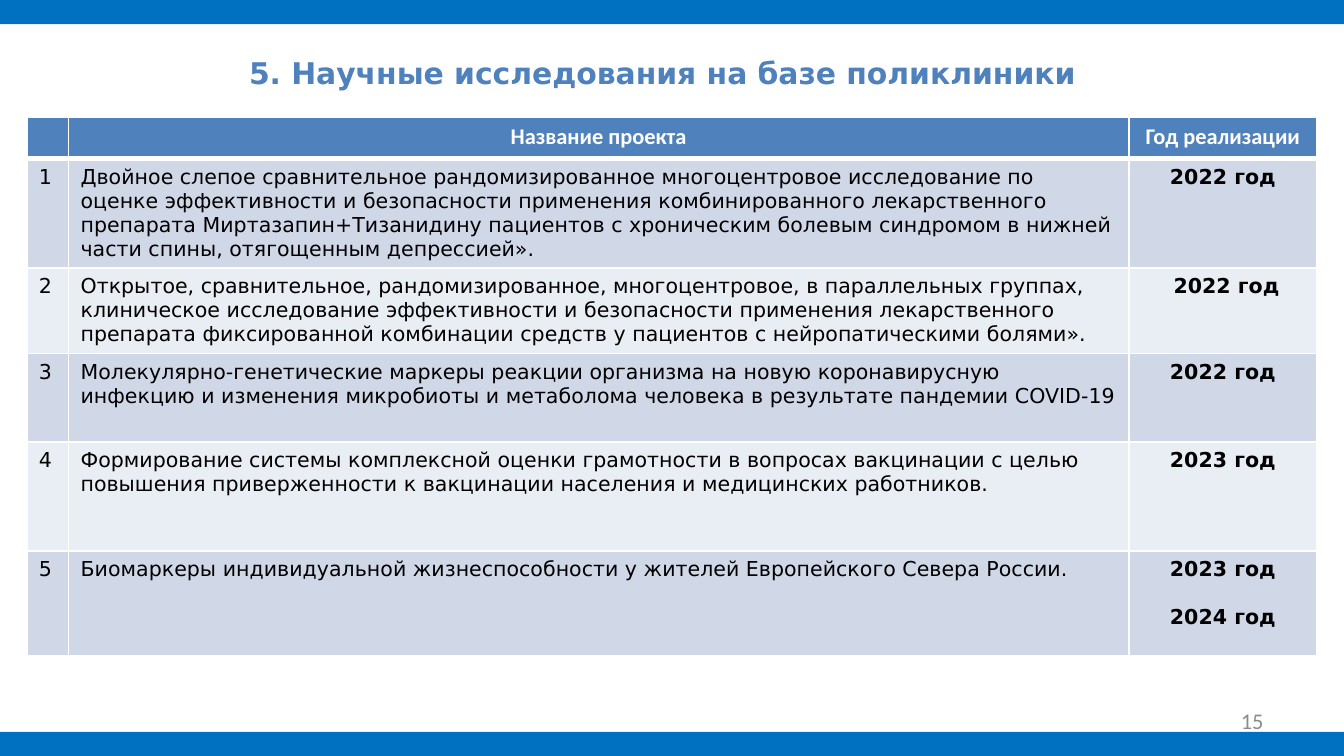
from dataclasses import dataclass

from lxml.etree import SubElement
from pptx import Presentation
from pptx.dml.color import RGBColor
from pptx.enum.shapes import MSO_SHAPE
from pptx.enum.text import MSO_ANCHOR, PP_ALIGN
from pptx.oxml.ns import qn
from pptx.util import Inches, Pt

# Content
TITLE = "5. Научные исследования на базе поликлиники"
PAGE_NUMBER = "15"
HEADER = ("", "Название проекта", "Год реализации")
PROJECTS = [
    ("Двойное слепое сравнительное рандомизированное многоцентровое исследование по "
     "оценке эффективности и безопасности применения комбинированного лекарственного "
     "препарата Миртазапин+Тизанидину пациентов с хроническим болевым синдромом в нижней "
     "части спины, отягощенным депрессией».", ["2022 год"]),
    ("Открытое, сравнительное, рандомизированное, многоцентровое, в параллельных группах, "
     "клиническое исследование эффективности и безопасности применения лекарственного "
     "препарата фиксированной комбинации средств у пациентов с нейропатическими болями».",
     [" 2022 год"]),
    ("Молекулярно-генетические маркеры реакции организма на новую коронавирусную "
     "инфекцию и изменения микробиоты и метаболома человека в результате пандемии COVID-19",
     ["2022 год"]),
    ("Формирование системы комплексной оценки грамотности в вопросах вакцинации с целью "
     "повышения приверженности к вакцинации населения и медицинских работников.",
     ["2023 год"]),
    ("Биомаркеры индивидуальной жизнеспособности у жителей Европейского Севера России.",
     ["2023 год", "2024 год"]),
]

# Grid, in inches
COLUMNS = (0.31, 7.89, 1.4)
ROWS = (0.31, 0.81, 0.63, 0.66, 0.81, 0.78)
TABLE_LEFT, TABLE_TOP = 0.2, 0.87
BAR_HEIGHT = 0.18


@dataclass(frozen=True)
class Theme:
    bar: str = "0070C0"
    accent: str = "4F81BD"
    bands: tuple = ("D0D8E8", "E9EDF4")
    white: str = "FFFFFF"
    black: str = "000000"
    grey: str = "8C8C8C"
    body_font: str = "DejaVu Sans"
    label_font: str = "Calibri"
    title_size: int = 16
    label_size: int = 12
    body_size: int = 11


THEME = Theme()


def write(frame, *lines, size=THEME.body_size, font=THEME.body_font, color=THEME.black,
          bold=False, align=PP_ALIGN.LEFT, gap=0):
    """Fill a text frame, one paragraph a line, with a gap between paragraphs."""
    frame.word_wrap = True
    for index, line in enumerate(lines):
        para = frame.add_paragraph() if index else frame.paragraphs[0]
        para.alignment = align
        if index:
            para.space_before = Pt(gap)
        if not line:
            SubElement(para._p, qn("a:endParaRPr"), sz=str(size * 100))
            continue
        span = para.add_run()
        span.text = line
        span.font.size, span.font.name, span.font.bold = Pt(size), font, bold
        span.font.color.rgb = RGBColor.from_string(color)


def border(cell, bottom):
    """Draw white cell borders, one point wide except below."""
    properties = cell._tc.get_or_add_tcPr()
    widths = {"lnL": 1, "lnR": 1, "lnT": 1, "lnB": bottom}
    for index, (side, width) in enumerate(widths.items()):
        line = SubElement(properties, qn(f"a:{side}"), w=str(Pt(width)))
        fill = SubElement(line, qn("a:solidFill"))
        SubElement(fill, qn("a:srgbClr"), val=THEME.white)
        properties.insert(index, line)


deck = Presentation()
deck.slide_width = Inches(10)
deck.slide_height = deck.slide_width * 9 // 16
page = deck.slides.add_slide(deck.slide_layouts[5])

# Bars along the top and bottom edges
for top in (0, deck.slide_height - Inches(BAR_HEIGHT)):
    bar = page.shapes.add_shape(MSO_SHAPE.RECTANGLE, 0, top, deck.slide_width, Inches(BAR_HEIGHT))
    bar.shadow.inherit = False
    bar.fill.solid()
    bar.fill.fore_color.rgb = RGBColor.from_string(THEME.bar)
    bar.line.fill.background()

# Title
title = page.shapes.title
title.left, title.top, title.width, title.height = map(Inches, (0.43, 0.31, 9, 0.46))
title.text_frame.vertical_anchor = MSO_ANCHOR.MIDDLE
write(title.text_frame, TITLE, size=THEME.title_size, color=THEME.accent, bold=True,
      align=PP_ALIGN.CENTER)

# Project table
table = page.shapes.add_table(
    len(ROWS), len(COLUMNS), Inches(TABLE_LEFT), Inches(TABLE_TOP),
    Inches(sum(COLUMNS)), Inches(sum(ROWS))).table
for column, width in zip(table.columns, COLUMNS):
    column.width = Inches(width)
for row, height in zip(table.rows, ROWS):
    row.height = Inches(height)

for column, label in enumerate(HEADER):
    write(table.cell(0, column).text_frame, label, size=THEME.label_size,
          font=THEME.label_font, color=THEME.white, bold=True, align=PP_ALIGN.CENTER)
for number, (project, years) in enumerate(PROJECTS, start=1):
    write(table.cell(number, 0).text_frame, str(number))
    write(table.cell(number, 1).text_frame, project)
    write(table.cell(number, 2).text_frame, *years, bold=True, align=PP_ALIGN.CENTER, gap=13)

for index, row in enumerate(table.rows):
    color = THEME.bands[(index - 1) % 2] if index else THEME.accent
    for cell in row.cells:
        cell.margin_left = cell.margin_right = Inches(0.09)
        cell.margin_top = cell.margin_bottom = Inches(0.05)
        cell.fill.solid()
        cell.fill.fore_color.rgb = RGBColor.from_string(color)
        border(cell, bottom=1 if index else 3)

# Page number
box = page.shapes.add_textbox(*map(Inches, (7.17, 5.21, 2.33, 0.3)))
box.text_frame.vertical_anchor = MSO_ANCHOR.MIDDLE
write(box.text_frame, PAGE_NUMBER, size=THEME.label_size, font=THEME.label_font,
      color=THEME.grey, align=PP_ALIGN.RIGHT)

deck.save("out.pptx")
